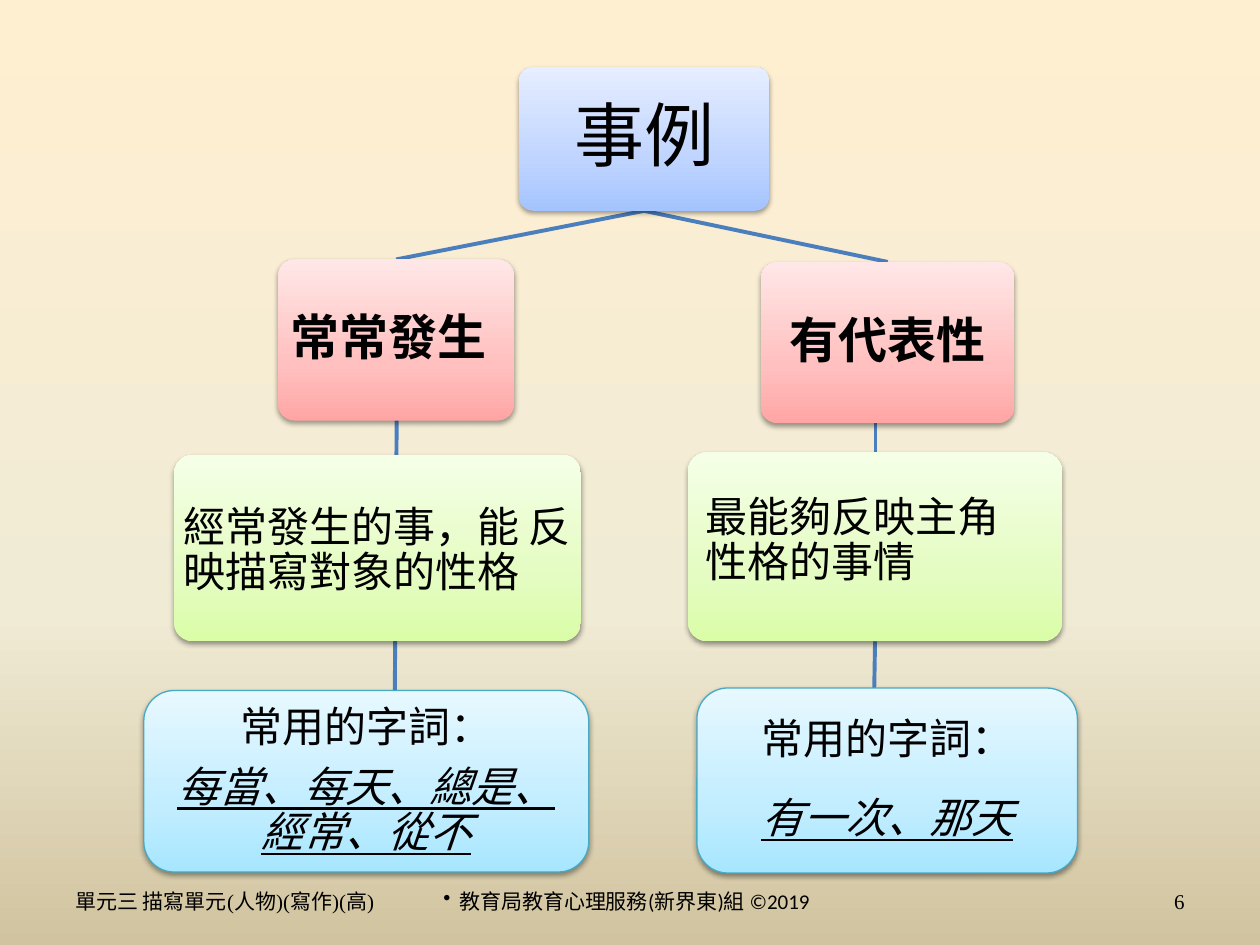
from lxml import etree
from pptx import Presentation
from pptx.dml.color import RGBColor
from pptx.enum.shapes import MSO_CONNECTOR, MSO_SHAPE
from pptx.enum.text import MSO_ANCHOR, PP_ALIGN
from pptx.oxml.ns import qn
from pptx.util import Cm, Pt

ROUNDED = MSO_SHAPE.ROUNDED_RECTANGLE
STRAIGHT = MSO_CONNECTOR.STRAIGHT
MIDDLE = MSO_ANCHOR.MIDDLE
LEFT, CENTER, RIGHT = PP_ALIGN.LEFT, PP_ALIGN.CENTER, PP_ALIGN.RIGHT
TOP_SIDE, BOTTOM_SIDE = 0, 2

BACKDROP = [(0, "FFEFD1"), (65, "F0EBD5"), (100, "D1C39F")]
INK, LINK_COLOR, WORDS_BORDER = "000000", "4B7EBC", "46AAC5"

STYLES = {
    "topic": dict(stops=[(0, "A4C4FF"), (35, "BFD4FF"), (100, "E6EEFF")],
                  size=40, font="Noto Sans CJK SC", bold=False, align=CENTER),
    "trait": dict(stops=[(0, "FFA6A5"), (35, "FFC0BF"), (100, "FFE7E7")],
                  size=28, font="Calibri", bold=True, align=CENTER),
    "meaning": dict(stops=[(0, "DAFDA7"), (35, "E4FCC2"), (100, "F5FFE7")],
                    size=24, font="Calibri", bold=False, align=LEFT),
    "words": dict(stops=[(0, "A7E6FF"), (35, "C1EDFF"), (100, "E7F8FF")],
                  size=24, font="Calibri", bold=False, align=CENTER),
}

DEFAULT_INSETS = (0.25, 0.13, 0.25, 0.13)
BOXES = {
    "example": ("topic", (10.46, 1.35, 5.05, 2.9), (0, 0, 0, 0), ["事例"], 14),
    "often": ("trait", (5.61, 5.23, 4.75, 3.25), (0, 0, 0.3, 0), ["常常發生"], 9.8),
    "typical": ("trait", (15.34, 5.28, 5.11, 3.25), (0, 0, 0, 0), ["有代表性"], 9.8),
    "often meaning": ("meaning", (3.51, 9.17, 8.2, 3.76), (0.08, 0.13, 0, 0),
                      ["經常發生的事，能 反映描寫對象的性格"], 8.4),
    "typical meaning": ("meaning", (13.87, 9.12, 7.54, 3.81), (0.25, 0, 0.3, 0.23),
                        ["最能夠反映主角性格的事情"], 8.4),
    "often words": ("words", (2.9, 13.92, 8.97, 3.66), DEFAULT_INSETS,
                    ["常用的字詞：", "每當、每天、總是、經常、從不"], 8.4),
    "typical words": ("words", (14.05, 13.87, 7.67, 3.73), DEFAULT_INSETS,
                      ["常用的字詞：", "有一次、那天"], 19.4),
}

STEMS = [
    ((8, 7.95), (7.95, 15.27), None),
    ((17.65, 8.38), (17.65, 9.53), None),
    ((17.64, 12.93), (17.6, 15.27), "typical meaning"),
]
BRANCHES = ["often", "typical"]

FOOTER_TOP, FOOTER_HEIGHT = 17.65, 1.02
FOOTERS = [
    (1.27, 7.24, "單元三 描寫單元(人物)(寫作)(高)", "Times New Roman", LEFT, False),
    (8.69, 8.05, "教育局教育心理服務(新界東)組 ©2019", "Calibri", CENTER, True),
    (18.21, 5.92, "6", "Times New Roman", RIGHT, False),
]


def color(value):
    return RGBColor.from_string(value)


def paint_gradient(fill, owner, stops, angle):
    fill.gradient()
    fill.gradient_angle = angle
    stop_list = next(owner.iter(qn("a:gsLst")))
    for old in list(stop_list):
        stop_list.remove(old)
    for percent, value in stops:
        stop = etree.SubElement(stop_list, qn("a:gs"), pos=str(percent * 1000))
        etree.SubElement(stop, qn("a:srgbClr"), val=value)


def add_shadow(box):
    box.shadow.inherit = False
    effects = box._element.spPr.find(qn("a:effectLst"))
    shadow = etree.SubElement(effects, qn("a:outerShdw"), blurRad=str(Pt(3.1)),
                              dist=str(Pt(1.6)), dir="5400000", rotWithShape="0")
    shade = etree.SubElement(shadow, qn("a:srgbClr"), val=INK)
    etree.SubElement(shade, qn("a:alpha"), val="38000")


def format_text(paragraph, size, font, align, bold=False):
    paragraph.alignment = align
    for run in paragraph.runs:
        run.font.size = Pt(size)
        run.font.name = font
        run.font.bold = bold
        run.font.color.rgb = color(INK)


def add_link(slide, start=(0, 0), end=(0, 0)):
    link = slide.shapes.add_connector(STRAIGHT, *map(Cm, start + end))
    link.line.color.rgb = color(LINK_COLOR)
    link.line.width = Pt(2.25)
    etree.SubElement(link._element.spPr, qn("a:effectLst"))
    return link


def add_box(slide, kind, place, insets, lines, gap):
    style = STYLES[kind]
    box = slide.shapes.add_shape(ROUNDED, *map(Cm, place))
    paint_gradient(box.fill, box._element, style["stops"], 90)
    if kind == "words":
        box.line.color.rgb = color(WORDS_BORDER)
        box.line.width = Pt(0.75)
    else:
        box.adjustments[0] = 0.1
        box.line.fill.background()
    add_shadow(box)
    frame = box.text_frame
    frame.word_wrap = True
    frame.vertical_anchor = MIDDLE
    (frame.margin_left, frame.margin_top,
     frame.margin_right, frame.margin_bottom) = map(Cm, insets)
    frame.text = "\n".join(lines)
    for paragraph in frame.paragraphs:
        paragraph.line_spacing = 0.9
        paragraph.space_after = Pt(gap)
        format_text(paragraph, style["size"], style["font"], style["align"], style["bold"])
    for paragraph in frame.paragraphs[1:]:
        paragraph.space_after = Pt(8.4)
        paragraph.runs[0].font.italic = True
        paragraph.runs[0].font.underline = True
    return box


def add_footer(slide, left, width, text, font, align, bulleted):
    footer = slide.shapes.add_textbox(*map(Cm, (left, FOOTER_TOP, width, FOOTER_HEIGHT)))
    frame = footer.text_frame
    frame.word_wrap = True
    frame.vertical_anchor = MIDDLE
    frame.text = text
    paragraph = frame.paragraphs[0]
    format_text(paragraph, 12, font, align)
    if bulleted:
        paragraph.space_before = Pt(2.4)
        etree.SubElement(paragraph._p.get_or_add_pPr(), qn("a:buChar"), char="•")


def main():
    deck = Presentation()
    deck.slide_width, deck.slide_height = Cm(25.4), Cm(19.05)
    slide = deck.slides.add_slide(deck.slide_layouts[6])
    paint_gradient(slide.background.fill, slide._element, BACKDROP, 270)

    stems = [(add_link(slide, start, end), source) for start, end, source in STEMS]
    branches = [(add_link(slide), target) for target in BRANCHES]
    for footer in FOOTERS:
        add_footer(slide, *footer)
    boxes = {name: add_box(slide, *content) for name, content in BOXES.items()}

    for stem, source in stems:
        if source:
            stem.begin_connect(boxes[source], BOTTOM_SIDE)
    for branch, target in branches:
        branch.begin_connect(boxes["example"], BOTTOM_SIDE)
        branch.end_connect(boxes[target], TOP_SIDE)

    deck.save("out.pptx")


if __name__ == "__main__":
    main()
